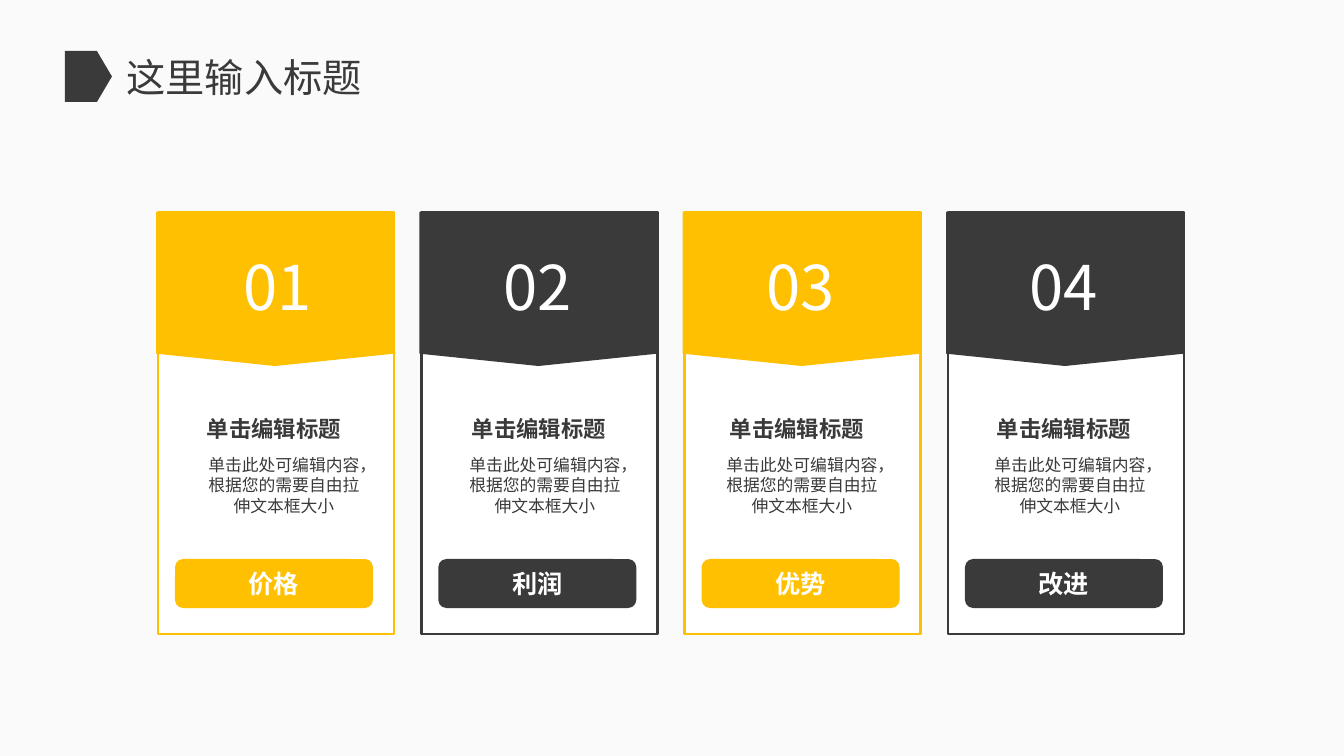
"""Builds a slide with four numbered cards under a heading."""
import pptx
import pptx.dml.color
import pptx.enum.shapes
import pptx.enum.text
import pptx.util

HEADING = "这里输入标题"
CARD_TITLE = "单击编辑标题"
CARD_BODY = "单击此处可编辑内容，根据您的需要自由拉伸文本框大小"
COLORS = {"yellow": "FFC001", "dark": "3A3A3A", "white": "FFFFFF", "background": "FAFAFA"}
FONT = "Noto Sans CJK SC"
CARDS = [
    {"number": "01", "label": "价格", "color": "yellow", "number_x": 212, "title_x": 145, "body_x": 208},
    {"number": "02", "label": "利润", "color": "dark", "number_x": 472, "title_x": 410, "body_x": 469},
    {"number": "03", "label": "优势", "color": "yellow", "number_x": 735, "title_x": 668, "body_x": 726},
    {"number": "04", "label": "改进", "color": "dark", "number_x": 998, "title_x": 935, "body_x": 994},
]
FIRST_CARD_X, LAST_CARD_X = 158, 948
EMU_PER_PX = 12192000 / 1344
SHAPES = pptx.enum.shapes.MSO_SHAPE
ANCHORS = pptx.enum.text.MSO_ANCHOR


def px(length):
    return pptx.util.Emu(round(length * EMU_PER_PX))


def rgb(name):
    return pptx.dml.color.RGBColor.from_string(COLORS[name])


def write(shape, text, size, color, bold=False, anchor=ANCHORS.TOP, line_spacing=None):
    frame = shape.text_frame
    frame.word_wrap = True
    frame.vertical_anchor = anchor
    paragraph = frame.paragraphs[0]
    paragraph.alignment = pptx.enum.text.PP_ALIGN.CENTER
    paragraph.line_spacing = line_spacing
    run = paragraph.add_run()
    run.text = text
    run.font.size = pptx.util.Pt(size)
    run.font.bold = bold
    run.font.name = FONT
    run.font.color.rgb = rgb(color)
    east_asian = run.font._element.makeelement(pptx.oxml.ns.qn("a:ea"), {"typeface": FONT})
    run.font._element.append(east_asian)


def add_block(slide, kind, box, fill, line=None, adjustment=None):
    shape = slide.shapes.add_shape(kind, *map(px, box))
    shape.shadow.inherit = False
    shape.fill.solid()
    shape.fill.fore_color.rgb = rgb(fill)
    if line:
        shape.line.color.rgb = rgb(line)
        shape.line.width = pptx.util.Pt(2)
    else:
        shape.line.fill.background()
    if adjustment is not None:
        shape.adjustments[0] = adjustment
    return shape


def add_text(slide, box, text, size, color, inset=True, **style):
    shape = slide.shapes.add_textbox(*map(px, box))
    if not inset:
        frame = shape.text_frame
        frame.margin_left = frame.margin_right = frame.margin_top = frame.margin_bottom = 0
    write(shape, text, size, color, **style)


def add_card(slide, x, card):
    color = card["color"]
    add_block(slide, SHAPES.RECTANGLE, (x, 212, 236, 422), "white", line=color)
    banner = add_block(slide, SHAPES.PENTAGON, (x + 40, 170, 154, 238), color, adjustment=0.08)
    banner.rotation = 90
    button = add_block(slide, SHAPES.ROUNDED_RECTANGLE, (x + 17, 559, 198, 49), color)
    write(button, card["label"], 18, "white", bold=True, anchor=ANCHORS.MIDDLE)
    add_text(slide, (card["number_x"], 243, 132, 85), card["number"], 44, "white", anchor=ANCHORS.MIDDLE)
    add_text(slide, (card["title_x"], 415, 258, 27), CARD_TITLE, 16, "dark", inset=False,
             bold=True, anchor=ANCHORS.MIDDLE)
    add_text(slide, (card["body_x"], 455, 152, 61), CARD_BODY, 12, "dark", inset=False,
             line_spacing=pptx.util.Pt(14.4))


def main():
    presentation = pptx.Presentation()
    presentation.slide_width, presentation.slide_height = px(1344), px(756)
    slide = presentation.slides.add_slide(presentation.slide_layouts[6])
    slide.background.fill.solid()
    slide.background.fill.fore_color.rgb = rgb("background")
    pitch = (LAST_CARD_X - FIRST_CARD_X) / (len(CARDS) - 1)
    for index, card in enumerate(CARDS):
        add_card(slide, FIRST_CARD_X + index * pitch, card)
    add_block(slide, SHAPES.PENTAGON, (65, 51, 47, 51), "dark", adjustment=0.32)
    add_text(slide, (44, 48, 400, 58), HEADING, 28, "dark", anchor=ANCHORS.MIDDLE)
    presentation.save("out.pptx")


if __name__ == "__main__":
    main()
